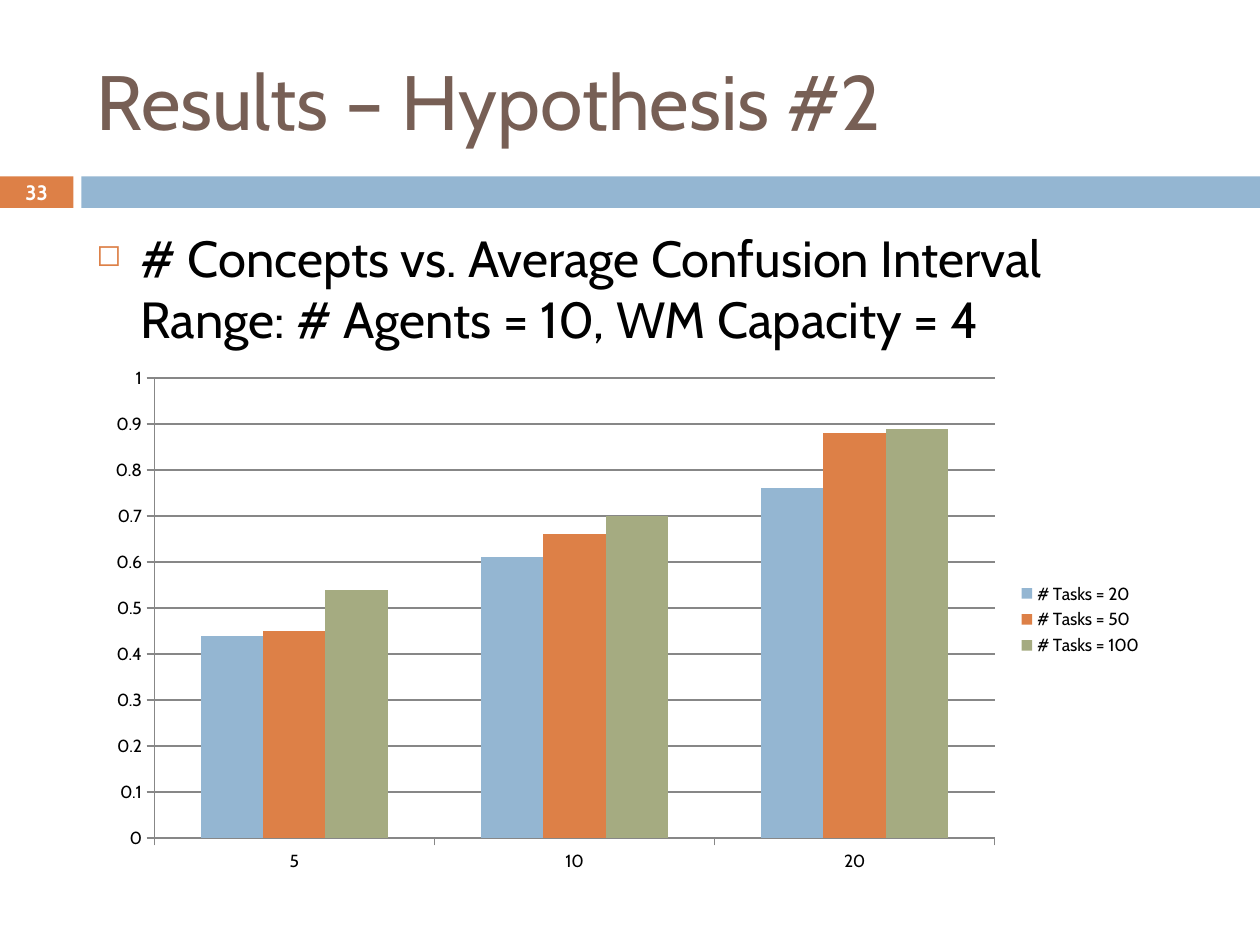
"""Build the Hypothesis #2 results slide with its clustered column chart."""
from dataclasses import dataclass, field

from lxml import etree
from pptx import Presentation
from pptx import util as u
from pptx.chart.data import CategoryChartData
from pptx.dml.color import RGBColor
from pptx.enum import chart as ch, shapes, text
from pptx.oxml.ns import qn

FONT = "Cabin"
ORANGE, BLUE, GREEN = "DD8047", "94B6D2", "A5AB81"
BLACK, WHITE, BROWN, GREY = "000000", "FFFFFF", "775F55", "878787"


@dataclass
class Box:
    x: float
    y: float
    w: float
    h: float

    def pts(self):
        return [u.Pt(v) for v in (self.x, self.y, self.w, self.h)]


@dataclass
class Bar:
    box: Box
    color: str


@dataclass
class Label:
    box: Box
    words: str
    size: float
    color: str
    anchor: text.MSO_ANCHOR = text.MSO_ANCHOR.MIDDLE
    align: text.PP_ALIGN = text.PP_ALIGN.LEFT
    font: dict = field(default_factory=dict)
    bullet: str = ""


@dataclass
class Series:
    name: str
    values: tuple
    color: str


BARS = [
    Bar(Box(0, 100.8, 42, 18), ORANGE),
    Bar(Box(46.5, 100.8, 673.5, 18), BLUE),
]
LABELS = [
    Label(Box(48, 18, 642, 78), "Results – Hypothesis #2", 44, BROWN),
    Label(Box(0, 100, 42, 19.5), "33", 11.9, WHITE,
          align=text.PP_ALIGN.CENTER, font={"bold": True}),
    Label(Box(48, 126, 642, 354),
          "# Concepts vs. Average Confusion Interval Range: # Agents = 10, WM Capacity = 4",
          29, BLACK, anchor=text.MSO_ANCHOR.TOP, bullet="◻"),
]
CHART_BOX = Box(54, 204, 606, 300)
CONCEPTS = ["5", "10", "20"]
SERIES = [
    Series("# Tasks = 20", (0.44, 0.61, 0.76), BLUE),
    Series("# Tasks = 50", (0.45, 0.66, 0.88), ORANGE),
    Series("# Tasks = 100", (0.54, 0.7, 0.89), GREEN),
]


def rgb(color: str) -> RGBColor:
    return RGBColor.from_string(color)


def assign(obj, values: dict) -> None:
    for name, value in values.items():
        setattr(obj, name, value)


def fill(target, color: str) -> None:
    target.fill.solid()
    target.fill.fore_color.rgb = rgb(color)


def add_bar(s, bar: Bar) -> None:
    sp = s.shapes.add_shape(shapes.MSO_SHAPE.RECTANGLE, *bar.box.pts())
    fill(sp, bar.color)
    sp.line.fill.background()
    sp.shadow.inherit = False


def add_bullet(p, char: str) -> None:
    p.space_before = u.Pt(7)
    pPr = p._p.get_or_add_pPr()
    indent = u.Pt(25.2)
    pPr.set("marL", str(indent))
    pPr.set("indent", str(-indent))
    clr = etree.SubElement(pPr, qn("a:buClr"))
    etree.SubElement(clr, qn("a:srgbClr"), val=ORANGE)
    etree.SubElement(pPr, qn("a:buSzPct"), val="60000")
    etree.SubElement(pPr, qn("a:buChar"), char=char)


def add_label(s, label: Label) -> None:
    tf = s.shapes.add_textbox(*label.box.pts()).text_frame
    assign(tf, {"word_wrap": True, "vertical_anchor": label.anchor})
    p = tf.paragraphs[0]
    p.alignment = label.align
    if label.bullet:
        add_bullet(p, label.bullet)
    r = p.add_run()
    r.text = label.words
    assign(r.font, {"name": FONT, "size": u.Pt(label.size), **label.font})
    r.font.color.rgb = rgb(label.color)


def style_line(line) -> None:
    line.color.rgb = rgb(GREY)
    line.width = u.Pt(0.75)


def add_results_chart(s) -> None:
    data = CategoryChartData()
    data.categories = CONCEPTS
    for series in SERIES:
        data.add_series(series.name, series.values)
    chart = s.shapes.add_chart(
        ch.XL_CHART_TYPE.COLUMN_CLUSTERED, *CHART_BOX.pts(), data).chart
    assign(chart, {"has_title": False, "has_legend": True})
    assign(chart.font, {"name": FONT, "size": u.Pt(10)})
    chart.font.color.rgb = rgb(BLACK)
    assign(chart.legend, {"position": ch.XL_LEGEND_POSITION.RIGHT,
                          "include_in_layout": False})
    plot = chart.plots[0]
    assign(plot, {"gap_width": 150, "overlap": 0, "vary_by_categories": False})
    for drawn, series in zip(plot.series, SERIES):
        fill(drawn.format, series.color)
        drawn.invert_if_negative = False
    for axis in (chart.category_axis, chart.value_axis):
        axis.major_tick_mark = ch.XL_TICK_MARK.OUTSIDE
        style_line(axis.format.line)
    assign(chart.value_axis, {"minimum_scale": 0, "maximum_scale": 1,
                              "major_unit": 0.1, "has_major_gridlines": True})
    style_line(chart.value_axis.major_gridlines.format.line)


def main() -> None:
    prs = Presentation()
    assign(prs, {"slide_width": u.Pt(720), "slide_height": u.Pt(540)})
    s = prs.slides.add_slide(prs.slide_layouts[6])
    for bar in BARS:
        add_bar(s, bar)
    for label in LABELS:
        add_label(s, label)
    add_results_chart(s)
    prs.save("out.pptx")


if __name__ == "__main__":
    main()
